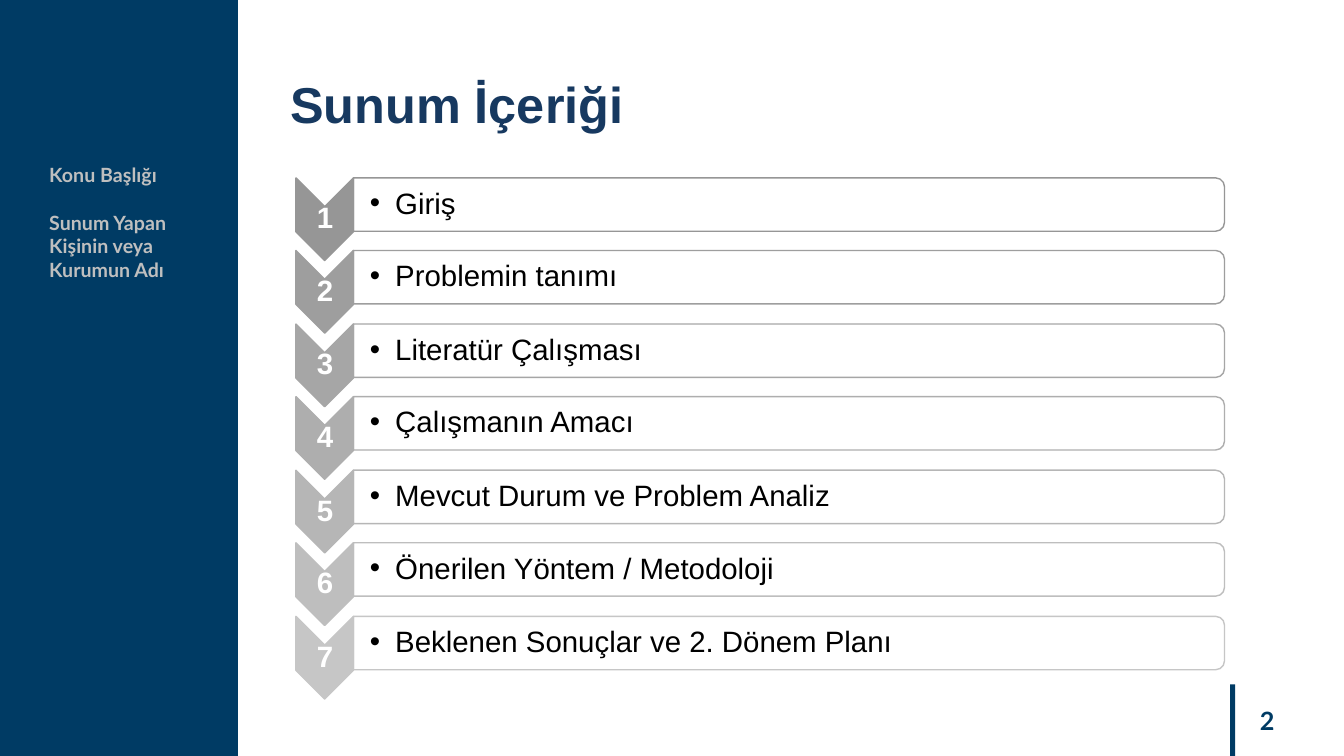
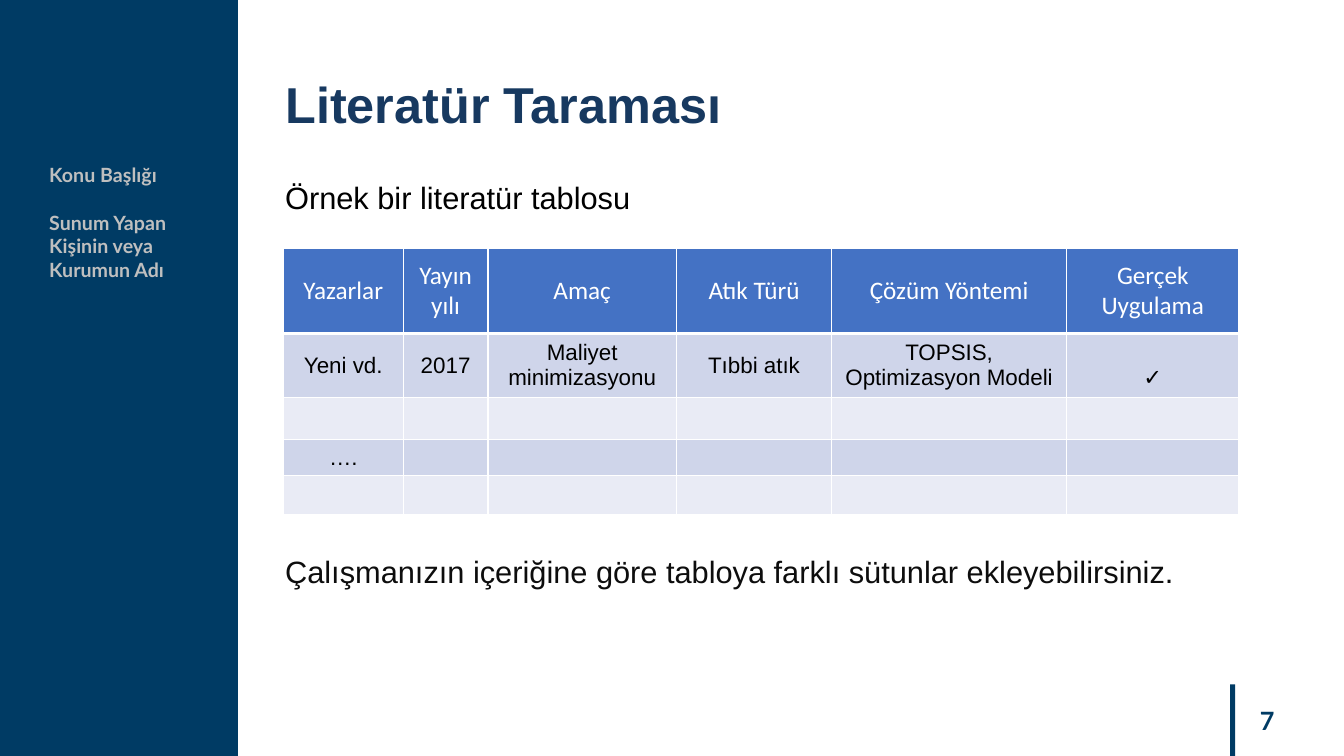
"""Build the contents slide and the literature table slide."""
from dataclasses import dataclass
from typing import Any

from lxml import etree
from pptx import Presentation
from pptx import util as u
from pptx.dml.color import RGBColor
from pptx.enum import shapes, text
from pptx.oxml import ns

EMU_PER_PX = 9144

COLOURS: dict[str, str] = {
    "navy": "003B64",
    "title": "173960",
    "sidebar": "BFBFBF",
    "white": "FFFFFF",
    "black": "000000",
    "note": "0D0D0D",
    "header": "4472C4",
    "odd": "CFD5EA",
    "even": "E9EBF5",
} | {f"step{i}": f"{150 + 8 * i:02X}" * 3 for i in range(7)}


@dataclass(frozen=True)
class Box:
    """A rectangle in px."""

    left: int
    top: int
    width: int
    height: int

    def emu(self) -> tuple[int, ...]:
        """Return the four lengths in EMU."""
        return tuple(px(n) for n in (self.left, self.top, self.width, self.height))


@dataclass(frozen=True)
class Style:
    """Font and paragraph formats of a text."""

    name: str
    size: int
    colour: str
    bold: bool = False
    align: Any = text.PP_ALIGN.LEFT
    anchor: Any = text.MSO_ANCHOR.TOP
    line_spacing: float = 1.0
    margins: tuple[int, int, int, int] = (10, 5, 10, 5)


CENTER, MIDDLE = text.PP_ALIGN.CENTER, text.MSO_ANCHOR.MIDDLE
TITLE = Style("Arial", 36, "title", bold=True)
SIDEBAR = Style("Lato", 14, "sidebar", bold=True)
PAGE_NUMBER = Style("Lato", 18, "navy", True, text.PP_ALIGN.RIGHT, MIDDLE)
STEP_NUMBER = Style("Arial", 21, "white", True, CENTER, MIDDLE, 0.9, (1, 1, 1, 1))
STEP_TEXT = Style("Arial", 21, "black", anchor=MIDDLE, line_spacing=0.9, margins=(16, 1, 1, 1))
INTRO = Style("Arial", 22, "black")
NOTE = Style("Arial", 22, "note")
HEADER_CELL = Style("Calibri", 18, "white", align=CENTER, anchor=MIDDLE)
BODY_CELL = Style("Arial", 16, "black", align=CENTER, anchor=MIDDLE)
TICK_CELL = Style("Arial", 16, "black", align=CENTER, anchor=MIDDLE, margins=(10, 30, 10, 5))

BANDS = (Box(0, 0, 236, 750), Box(1220, 679, 5, 71))
SIDEBAR_LINES = ("Konu Başlığı", "Sunum Yapan", "Kişinin veya", "Kurumun Adı")
STEPS = (
    "Giriş",
    "Problemin tanımı",
    "Literatür Çalışması",
    "Çalışmanın Amacı",
    "Mevcut Durum ve Problem Analiz",
    "Önerilen Yöntem / Metodoloji",
    "Beklenen Sonuçlar ve 2. Dönem Planı",
)
STEPS_SPAN = 435
TABLE_BOX = Box(281, 246, 948, 265)
COLUMN_WIDTHS = (119, 84, 187, 154, 233, 171)
ROW_HEIGHTS = (85, 63, 42, 36, 39)
TABLE_ROWS = (
    ("Yazarlar", "Yayın yılı", "Amaç", "Atık Türü", "Çözüm Yöntemi", "Gerçek Uygulama"),
    ("Yeni vd.", "2017", "Maliyet minimizasyonu", "Tıbbi atık", "TOPSIS, Optimizasyon Modeli", "✓"),
    ("",) * 6,
    ("….",) + ("",) * 5,
    ("",) * 6,
)


def px(length: int) -> int:
    """Turn px into EMU."""
    return length * EMU_PER_PX


def set_all(target: Any, values: dict[str, Any]) -> None:
    """Set each named attribute of the target."""
    for name, value in values.items():
        setattr(target, name, value)


def rgb(colour: str) -> RGBColor:
    """Return a named colour."""
    return RGBColor.from_string(COLOURS[colour])


def margins(style: Style) -> dict[str, int]:
    """Return the margin attributes of a style."""
    sides = ("margin_left", "margin_top", "margin_right", "margin_bottom")
    return {side: px(value) for side, value in zip(sides, style.margins)}


def write_paragraph(paragraph: Any, words: str, style: Style) -> None:
    """Write one styled run into a paragraph."""
    set_all(paragraph, {"alignment": style.align, "line_spacing": style.line_spacing})
    run = paragraph.add_run()
    run.text = words
    set_all(run.font, {"name": style.name, "size": u.Pt(style.size), "bold": style.bold})
    run.font.color.rgb = rgb(style.colour)


def write_frame(frame: Any, lines: tuple[str, ...], style: Style) -> None:
    """Format a text frame and write its lines."""
    frame_format = {"word_wrap": True, "auto_size": text.MSO_AUTO_SIZE.NONE,
                    "vertical_anchor": style.anchor}
    set_all(frame, frame_format | margins(style))
    for index, line in enumerate(lines):
        paragraph = frame.add_paragraph() if index else frame.paragraphs[0]
        write_paragraph(paragraph, line, style)


def add_text(slide: Any, box: Box, style: Style, *lines: str) -> Any:
    """Add a text box and return its frame."""
    frame = slide.shapes.add_textbox(*box.emu()).text_frame
    write_frame(frame, lines, style)
    return frame


def add_shape(slide: Any, kind: Any, box: Box, fill: str, line: str = "", rotation: int = 0) -> Any:
    """Add a flat preset shape."""
    shape = slide.shapes.add_shape(kind, *box.emu())
    shape.shadow.inherit = False
    shape.rotation = rotation
    shape.fill.solid()
    shape.fill.fore_color.rgb = rgb(fill)
    if line:
        shape.line.color.rgb = rgb(line)
        shape.line.width = u.Pt(1)
    else:
        shape.line.fill.background()
    return shape


def add_bands(slide: Any) -> None:
    """Draw the navy bands and move them to the layout."""
    for band in BANDS:
        shape = add_shape(slide, shapes.MSO_SHAPE.RECTANGLE, band, "navy")
        slide.slide_layout.shapes.element.insert(2, shape.element)


def add_base(presentation: Any, title: str, title_box: Box, number: int) -> Any:
    """Add a slide with its title, sidebar text and number."""
    slide = presentation.slides.add_slide(presentation.slide_layouts[5])
    placeholder = slide.shapes.title
    set_all(placeholder, dict(zip(("left", "top", "width", "height"), title_box.emu())))
    write_frame(placeholder.text_frame, (title,), TITLE)
    add_text(slide, Box(974, 695, 300, 40), PAGE_NUMBER, str(number))
    sidebar = add_text(slide, Box(39, 157, 157, 157), SIDEBAR, *SIDEBAR_LINES)
    sidebar.paragraphs[1].space_before = u.Pt(17)
    return slide


def add_bullet(paragraph: Any) -> None:
    """Give a paragraph a hanging bullet."""
    properties = paragraph._p.get_or_add_pPr()
    properties.set("marL", str(px(25)))
    properties.set("indent", str(px(-25)))
    etree.SubElement(properties, ns.qn("a:buFont"), typeface="Arial")
    etree.SubElement(properties, ns.qn("a:buChar"), char="•")


def add_step(slide: Any, index: int, words: str) -> None:
    """Add a numbered chevron and its bar."""
    offset = STEPS_SPAN * index // (len(STEPS) - 1)
    grey = f"step{index}"
    bar = add_shape(slide, shapes.MSO_SHAPE.ROUND_2_SAME_RECTANGLE,
                    Box(756, offset - 229, 53, 864), "white", grey, 90)
    fill = bar.element.spPr.find(f"{ns.qn('a:solidFill')}/{ns.qn('a:srgbClr')}")
    etree.SubElement(fill, ns.qn("a:alpha"), val="90000")
    add_shape(slide, shapes.MSO_SHAPE.CHEVRON, Box(281, offset + 189, 82, 57), grey, grey, 90)
    add_text(slide, Box(294, offset + 205, 57, 25), STEP_NUMBER, str(index + 1))
    frame = add_text(slide, Box(351, offset + 179, 862, 48), STEP_TEXT, words)
    add_bullet(frame.paragraphs[0])


def add_borders(cell: Any, bottom: int) -> None:
    """Give a cell white borders."""
    properties = cell._tc.get_or_add_tcPr()
    for side, points in {"lnL": 1, "lnR": 1, "lnT": 1, "lnB": bottom}.items():
        line = etree.SubElement(properties, ns.qn(f"a:{side}"), w=str(u.Pt(points)))
        fill = etree.SubElement(line, ns.qn("a:solidFill"))
        etree.SubElement(fill, ns.qn("a:srgbClr"), val=COLOURS["white"])


def fill_cell(cell: Any, words: str, row: int) -> None:
    """Format a table cell and write its words."""
    style = TICK_CELL if words == "✓" else BODY_CELL if row else HEADER_CELL
    add_borders(cell, 1 if row else 3)
    cell.fill.solid()
    cell.fill.fore_color.rgb = rgb(("odd" if row % 2 else "even") if row else "header")
    set_all(cell, {"vertical_anchor": style.anchor} | margins(style))
    paragraph = cell.text_frame.paragraphs[0]
    if words:
        write_paragraph(paragraph, words, style)
    else:
        etree.SubElement(paragraph._p, ns.qn("a:endParaRPr"), sz="1400")


def add_literature_table(slide: Any) -> None:
    """Add the literature table."""
    table = slide.shapes.add_table(len(ROW_HEIGHTS), len(COLUMN_WIDTHS), *TABLE_BOX.emu()).table
    set_all(table, {"first_row": False, "horz_banding": False})
    for column, width in zip(table.columns, COLUMN_WIDTHS):
        column.width = px(width)
    for row, (height, words) in enumerate(zip(ROW_HEIGHTS, TABLE_ROWS)):
        table.rows[row].height = px(height)
        for column, word in enumerate(words):
            fill_cell(table.cell(row, column), word, row)


def main() -> None:
    """Build and save the presentation."""
    presentation = Presentation()
    set_all(presentation, {"slide_width": px(1333), "slide_height": px(750)})

    contents = add_base(presentation, "Sunum İçeriği", Box(278, 68, 450, 71), 2)
    add_bands(contents)
    for index, words in enumerate(STEPS):
        add_step(contents, index, words)

    literature = add_base(presentation, "Literatür Taraması", Box(273, 68, 612, 71), 7)
    add_text(literature, Box(273, 172, 924, 47), INTRO, "Örnek bir literatür tablosu")
    add_literature_table(literature)
    add_text(literature, Box(273, 543, 924, 47), NOTE,
             "Çalışmanızın içeriğine göre tabloya farklı sütunlar ekleyebilirsiniz.")
    presentation.save("out.pptx")


if __name__ == "__main__":
    main()
